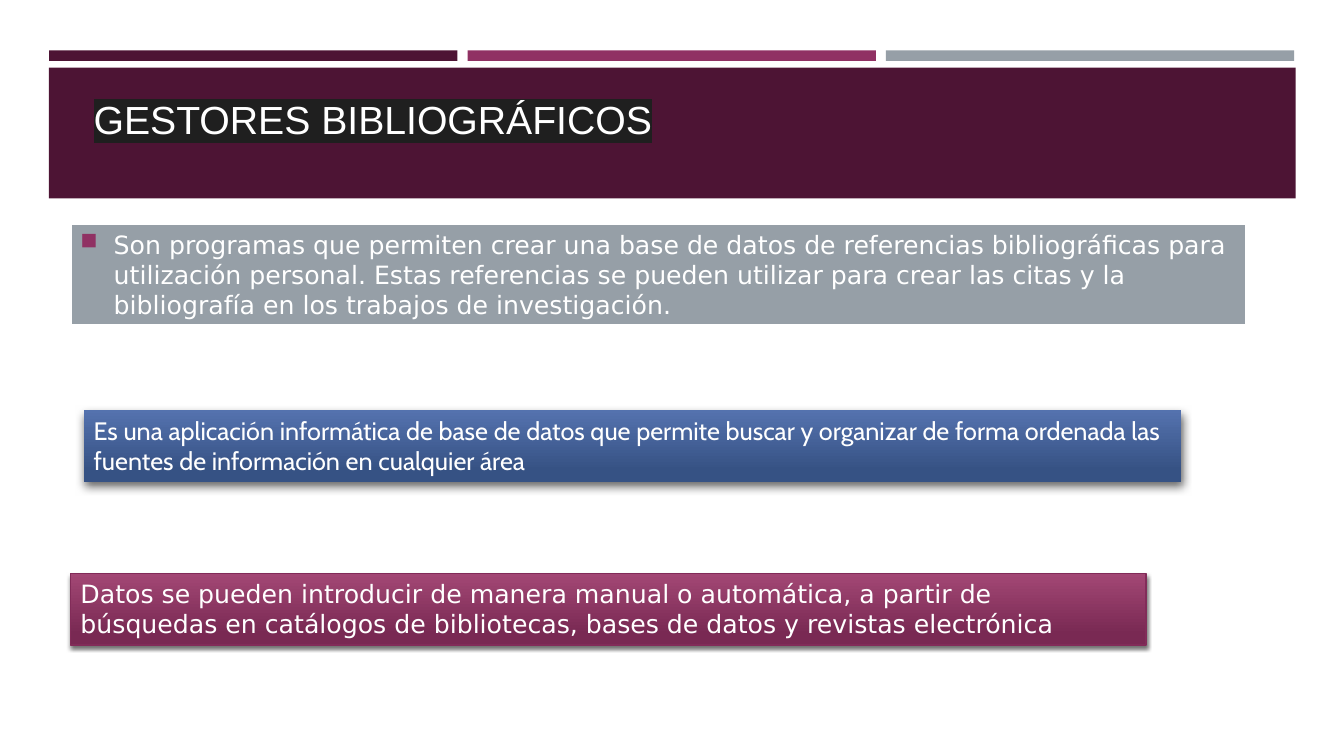
from dataclasses import dataclass
from typing import Optional

from lxml import etree
from pptx import Presentation
from pptx.dml.color import RGBColor
from pptx.enum.shapes import MSO_SHAPE
from pptx.enum.text import MSO_ANCHOR, MSO_AUTO_SIZE, PP_ALIGN
from pptx.oxml.ns import qn
from pptx.util import Inches, Pt

RECT = MSO_SHAPE.RECTANGLE
TOP, MID, LOW = MSO_ANCHOR.TOP, MSO_ANCHOR.MIDDLE, MSO_ANCHOR.BOTTOM
GROW, FIXED = MSO_AUTO_SIZE.SHAPE_TO_FIT_TEXT, MSO_AUTO_SIZE.NONE
LEFT = PP_ALIGN.LEFT
WIDE, HIGH = Inches(13.333), Inches(7.5)


@dataclass(frozen=True)
class Theme:
    plum: str = "4D1434"
    rose: str = "903163"
    grey: str = "969FA7"
    white: str = "FFFFFF"
    black: str = "000000"
    mark: str = "1F1F1F"
    edge: str = "822C59"
    pink: tuple = ("A24774", "792953")
    blue: tuple = ("5472AE", "365284")
    head: int = 28
    body: int = 18
    sans: str = "DejaVu Sans"
    title: str = "Arial"
    soft: str = "Cabin"


@dataclass(frozen=True)
class Area:
    """Left, top, width and height in percent of the slide."""
    x: float
    y: float
    w: float
    h: float

    def place(self) -> tuple:
        return (int(WIDE * self.x / 100), int(HIGH * self.y / 100),
                int(WIDE * self.w / 100), int(HIGH * self.h / 100))


@dataclass(frozen=True)
class Shade:
    """Opacity in percent, blur and distance in points, angle in degrees."""
    alpha: int
    blur: int
    dist: int
    angle: int


@dataclass(frozen=True)
class Panel:
    area: Area
    text: str
    font: str
    tones: tuple
    shade: Shade
    edge: Optional[str] = None


THEME = Theme()


def child(node, tag: str, **attrs):
    return etree.SubElement(node, qn(tag), {k: str(v) for k, v in attrs.items()})


def paint(color, code: str) -> None:
    color.rgb = RGBColor.from_string(code)


def draw_box(slide, area: Area, tones: tuple, edge: Optional[str] = None,
             width: float = 1, shade: Optional[Shade] = None):
    box = slide.shapes.add_shape(RECT, *area.place())
    box.shadow.inherit = False
    # One tone is a flat fill, two run from top to bottom
    if len(tones) == 1:
        box.fill.solid()
        paint(box.fill.fore_color, tones[0])
    else:
        box.fill.gradient()
        box.fill.gradient_angle = 270
        for stop, code, spot in zip(box.fill.gradient_stops, tones, (0, 0.84)):
            paint(stop.color, code)
            stop.position = spot
    if edge:
        paint(box.line.color, edge)
        box.line.width = Pt(width)
    else:
        box.line.fill.background()
    if shade:
        list_ = box._element.spPr.find(qn("a:effectLst"))
        outer = child(list_, "a:outerShdw", blurRad=Pt(shade.blur),
                      dist=Pt(shade.dist), dir=shade.angle * 60000, rotWithShape=0)
        tint = child(outer, "a:srgbClr", val=THEME.black)
        child(tint, "a:alpha", val=shade.alpha * 1000)
    return box


def write(box, text: str, *, font: str, size: int = THEME.body,
          color: str = THEME.white, anchor=TOP, fit=FIXED,
          mark: Optional[str] = None, bullet: Optional[str] = None) -> None:
    frame = box.text_frame
    frame.word_wrap = True
    frame.auto_size = fit
    frame.vertical_anchor = anchor
    para = frame.paragraphs[0]
    para.alignment = LEFT
    if bullet:
        para.space_after = Pt(6)
        props = para._p.get_or_add_pPr()
        props.set("marL", str(Inches(0.33)))
        props.set("indent", str(-Inches(0.33)))
        child(child(props, "a:buClr"), "a:srgbClr", val=bullet)
        child(props, "a:buSzPct", val=92000)
        child(props, "a:buChar", char="■")
    run = para.add_run()
    run.text = text
    run.font.size = Pt(size)
    paint(run.font.color, color)
    if mark:
        glow = child(run._r.get_or_add_rPr(), "a:highlight")
        child(glow, "a:srgbClr", val=mark)
    run.font.name = font


BARS = (THEME.plum, THEME.rose, THEME.grey)
PANELS = (
    Panel(Area(5.25, 75.87, 80.03, 9.47),
          "Datos se pueden introducir de manera manual o automática, a partir de "
          "búsquedas en catálogos de bibliotecas, bases de datos y revistas electrónica",
          THEME.sans, THEME.pink, Shade(55, 3, 2, 90), THEME.edge),
    Panel(Area(6.23, 54.27, 81.68, 9.47),
          "Es una aplicación informática de base de datos que permite buscar y "
          "organizar de forma ordenada las fuentes de información en cualquier área",
          THEME.soft, THEME.blue, Shade(60, 7, 3, 84)),
)


def main() -> None:
    deck = Presentation()
    deck.slide_width, deck.slide_height = WIDE, HIGH
    slide = deck.slides.add_slide(deck.slide_layouts[6])

    # Three bars above the title band
    for col, tone in enumerate(BARS):
        draw_box(slide, Area(3.66 + 31.13 * col, 6.67, 30.38, 1.4), (tone,))
    draw_box(slide, Area(3.63, 8.93, 92.77, 17.33), (THEME.plum,))

    # Title, raised from the foot of its box
    title = slide.shapes.add_textbox(*Area(6.23, 7.47, 75, 18.4).place())
    title.text_frame.margin_bottom = int(HIGH * 0.07)
    write(title, "GESTORES BIBLIOGRÁFICOS", font=THEME.title, size=THEME.head,
          anchor=LOW, mark=THEME.mark)

    # Definition
    lead = draw_box(slide, Area(5.25, 29.6, 87.52, 13.47), (THEME.grey,),
                    edge=THEME.white, width=2)
    write(lead, "Son programas que permiten crear una base de datos de referencias "
          "bibliográficas para utilización personal. Estas referencias se pueden "
          "utilizar para crear las citas y la bibliografía en los trabajos de "
          "investigación.", font=THEME.sans, anchor=MID, bullet=THEME.rose)

    # Shaded panels
    for panel in PANELS:
        box = draw_box(slide, panel.area, panel.tones, edge=panel.edge,
                       shade=panel.shade)
        write(box, panel.text, font=panel.font, fit=GROW)

    deck.save("out.pptx")


if __name__ == "__main__":
    main()
